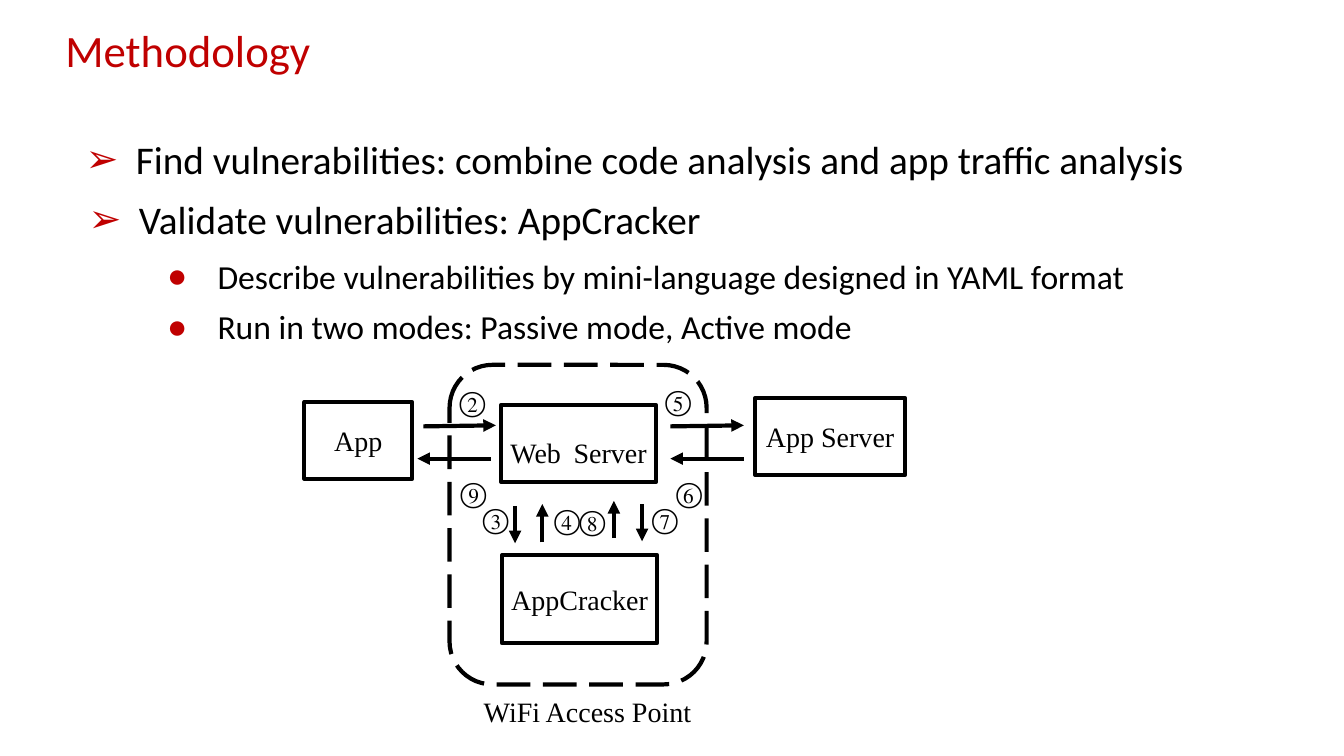
import pptx
import pptx.util
import pptx.dml.color
import pptx.enum.dml
import pptx.enum.shapes
import pptx.enum.text
import pptx.oxml
import pptx.oxml.ns
import lxml.etree

RED, BLACK = "C00000", "000000"
SANS, SERIF = "Calibri", "Times New Roman"
CELL = pptx.util.Inches(0.1)
A = pptx.oxml.ns.qn("a:t")[:-1]


def grid(*cells):
    return [round(n * CELL) for n in cells]


def write(sp, text, size, font, color=BLACK):
    tf = sp.text_frame
    tf.word_wrap = True
    p = tf.paragraphs[0]
    p.text = text
    for r in p.runs:
        r.font.size = pptx.util.Pt(size)
        r.font.name = font
        r.font.color.rgb = pptx.dml.color.RGBColor.from_string(color)
    return p


prs = pptx.Presentation()
prs.slide_width, prs.slide_height = grid(133.33, 75)
s = prs.slides.add_slide(prs.slide_layouts[6])

texts = [
    ("Methodology", 5.5, 1.8, 127.7, 6.4, 32, SANS, RED, None),
    ("Find vulnerabilities: combine code analysis and app traffic analysis",
     7.5, 12.9, 124.1, 5.7, 28, SANS, BLACK, "➢"),
    ("Validate vulnerabilities: AppCracker", 7.8, 18.9, 70.2, 5.7, 28, SANS, BLACK, "➢"),
    ("Describe vulnerabilities by mini-language designed in YAML format",
     15.6, 24.9, 117.7, 5, 24, SANS, BLACK, "●"),
    ("Run in two modes: Passive mode, Active mode",
     15.6, 29.9, 90.3, 5, 24, SANS, BLACK, "●"),
    ("WiFi Access Point", 47, 68.4, 24.5, 4.4, 20, SERIF, BLACK, None),
]
steps = [
    ("②", 44.6, 37.7), ("③", 46.9, 49.3), ("④", 54, 49.4), ("⑧", 56.5, 49.5),
    ("⑦", 63.7, 49.3), ("⑤", 65, 37.6), ("⑥", 66.1, 46.7), ("⑨", 44.7, 46.7),
]
texts += [(mark, x, y, 3.4, 4.4, 20, SERIF, BLACK, None) for mark, x, y in steps]

for text, x, y, w, h, size, font, color, bullet in texts:
    sp = s.shapes.add_textbox(*grid(x, y, w, h))
    p = write(sp, text, size, font, color)
    sp.text_frame.auto_size = pptx.enum.text.MSO_AUTO_SIZE.SHAPE_TO_FIT_TEXT
    if bullet:
        pPr = p._p.get_or_add_pPr()
        indent = grid(5)[0]
        pPr.set("marL", str(indent))
        pPr.set("indent", str(-indent))
        buClr = lxml.etree.SubElement(pPr, A + "buClr")
        lxml.etree.SubElement(buClr, A + "srgbClr", val=RED)
        lxml.etree.SubElement(pPr, A + "buFont", typeface="Arial")
        lxml.etree.SubElement(pPr, A + "buChar", char=bullet)

outlined = []
boxes = [
    ("App", 30.2, 39.9, 10.7, 7.6),
    ("Web Server", 49.7, 40.2, 15.4, 7.6),
    ("AppCracker", 49.8, 55.1, 15.4, 8.7),
    ("App Server", 74.9, 39.5, 14.9, 7.6),
]
for name, x, y, w, h in boxes:
    sp = s.shapes.add_shape(pptx.enum.shapes.MSO_SHAPE.RECTANGLE, *grid(x, y, w, h))
    p = write(sp, name, 20, SERIF)
    p.alignment = pptx.enum.text.PP_ALIGN.CENTER
    tf = sp.text_frame
    tf.vertical_anchor = pptx.enum.text.MSO_ANCHOR.MIDDLE
    tf.margin_left, tf.margin_right, tf.margin_top, tf.margin_bottom = grid(0.7, 0.7, 0.4, 0.4)
    if name == "Web Server":
        p.runs[0].text = "Web"
        for part, size in ((" ", 36), ("Server", 20)):
            r = p.add_run()
            r.text = part
            r.font.size = pptx.util.Pt(size)
            r.font.name = SERIF
            r.font.color.rgb = pptx.dml.color.RGBColor.from_string(BLACK)
    outlined.append(sp)

access_point = s.shapes.add_shape(
    pptx.enum.shapes.MSO_SHAPE.ROUNDED_RECTANGLE, *grid(44.6, 36.2, 25.5, 31.7))
access_point.line.dash_style = pptx.enum.dml.MSO_LINE.LONG_DASH
outlined.append(access_point)

for sp in outlined:
    sp.shadow.inherit = False
    sp.fill.background()

arrows = [
    (42, 42.3, 49.2, 42.2), (48.7, 45.5, 41.4, 45.5),
    (66.5, 42.3, 73.8, 42.2), (73.8, 45.5, 66.5, 45.5),
    (51.1, 50.2, 51.1, 53.9), (53.8, 53.8, 53.8, 50),
    (63.7, 50, 63.7, 53.7), (60.9, 53.4, 60.9, 49.7),
]
for ends in arrows:
    sp = s.shapes.add_connector(pptx.enum.shapes.MSO_CONNECTOR.STRAIGHT, *grid(*ends))
    outlined.append(sp)

for sp in outlined:
    sp.line.color.rgb = pptx.dml.color.RGBColor.from_string(BLACK)
    sp.line.width = pptx.util.Pt(3)

for sp in outlined[-len(arrows):]:
    lxml.etree.SubElement(sp.line._get_or_add_ln(), A + "tailEnd", type="triangle")
    lxml.etree.SubElement(sp._element.spPr, A + "effectLst")

prs.save("out.pptx")
